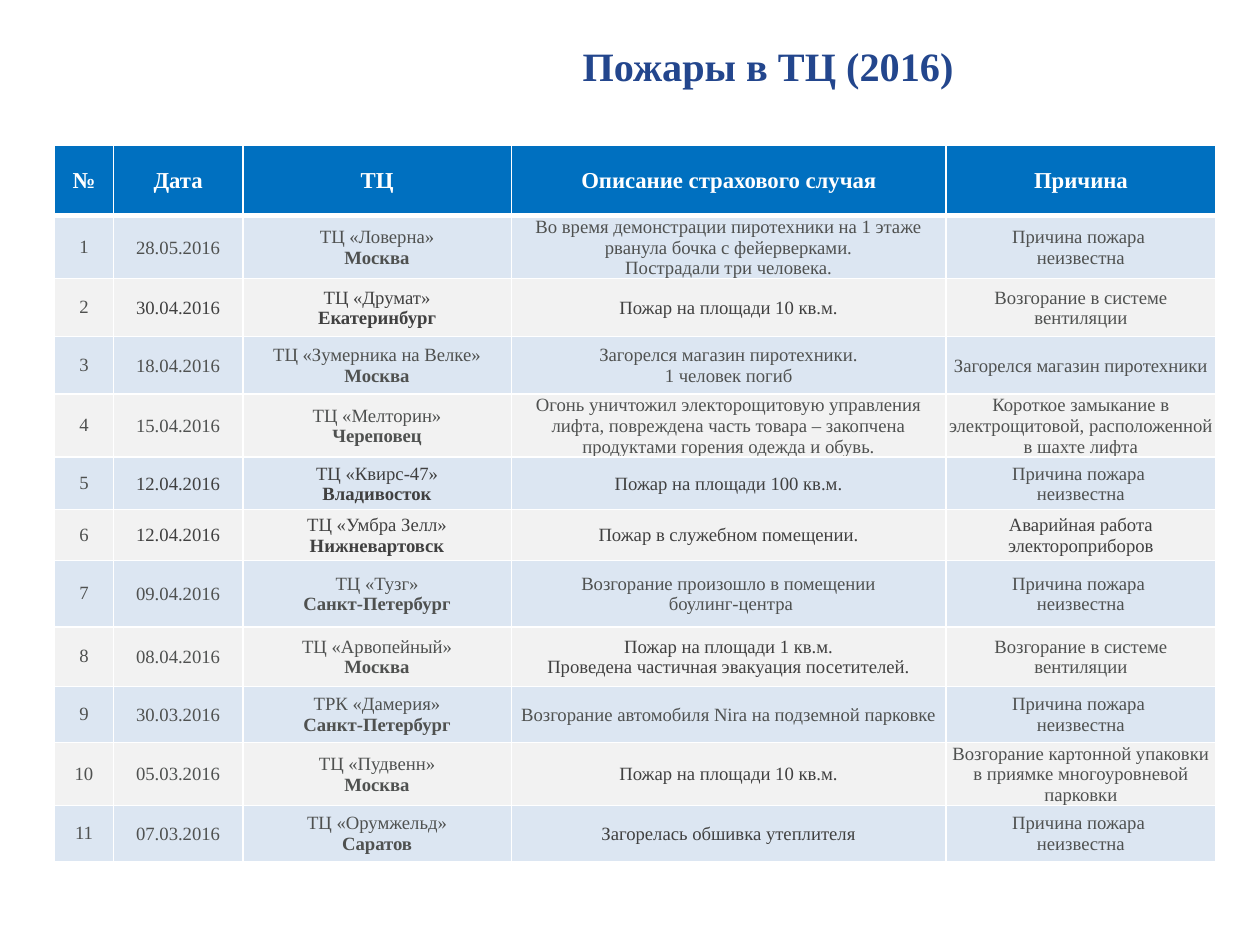
from lxml.etree import SubElement as Sub
from pptx import Presentation
from pptx.dml.color import RGBColor as Rgb
from pptx.enum.text import MSO_ANCHOR as Anchor, PP_ALIGN as Align
from pptx.oxml.ns import qn
from pptx.util import Pt

FONT = "Times New Roman"
WHITE, BLUE, NAVY = "FFFFFF", "0070C0", "23468D"
GREY, DARK = "4F5150", "404040"
BANDS = ["DCE6F2", "F2F2F2"]

WIDTHS = [33.6, 74, 153.4, 248.4, 154.2]
HEIGHTS = [40, 32.4, 33, 33, 30, 30, 29, 38, 34, 32, 32, 32]
HEADS = ["№", "Дата", "ТЦ", "Описание страхового случая", "Причина"]
NO_CAUSE = "Причина пожара \nнеизвестна"
VENT = "Возгорание в системе вентиляции"

# Date, centre, city, event, cause, columns set in the darker grey
FIRES = [
    ("28.05.2016", "ТЦ «Ловерна»", "Москва",
     "Во время демонстрации пиротехники на 1 этаже рванула бочка с "
     "фейерверками.\nПострадали три человека.", NO_CAUSE, ()),
    ("30.04.2016", "ТЦ «Друмат»", "Екатеринбург",
     "Пожар на площади 10 кв.м.", VENT, (1, 2, 3)),
    ("18.04.2016", "ТЦ «Зумерника на Велке»", "Москва",
     "Загорелся магазин пиротехники.\n1 человек погиб",
     "Загорелся магазин пиротехники", ()),
    ("15.04.2016", "ТЦ «Мелторин»", "Череповец",
     "Огонь уничтожил электорощитовую управления лифта, повреждена часть "
     "товара – закопчена продуктами горения одежда и обувь.",
     "Короткое замыкание в электрощитовой, расположенной в шахте лифта", ()),
    ("12.04.2016", "ТЦ «Квирс-47»", "Владивосток",
     "Пожар на площади 100 кв.м.", NO_CAUSE, (1, 2, 3)),
    ("12.04.2016", "ТЦ «Умбра Зелл»", "Нижневартовск",
     "Пожар в служебном помещении.",
     "Аварийная работа электороприборов", (1, 2, 3, 4)),
    ("09.04.2016", "ТЦ «Тузг»", "Санкт-Петербург",
     "Возгорание произошло в помещении\n боулинг-центра", NO_CAUSE, ()),
    ("08.04.2016", "ТЦ «Арвопейный»", "Москва",
     "Пожар на площади 1 кв.м.\nПроведена частичная эвакуация посетителей.",
     VENT, (3,)),
    ("30.03.2016", "ТРК «Дамерия»", "Санкт-Петербург",
     "Возгорание автомобиля Nira на подземной парковке", NO_CAUSE, ()),
    ("05.03.2016", "ТЦ «Пудвенн»", "Москва",
     "Пожар на площади 10 кв.м.",
     "Возгорание картонной упаковки в приямке многоуровневой парковки",
     (3,)),
    ("07.03.2016", "ТЦ «Орумжельд»", "Саратов",
     "Загорелась обшивка утеплителя", NO_CAUSE, (3,)),
]


def color(code):
    return Rgb.from_string(code)


def write(frame, lines, size, code):
    """Fill a frame with centred lines, each a (text, bold) pair."""
    for i, (text, bold) in enumerate(lines):
        para = frame.add_paragraph() if i else frame.paragraphs[0]
        para.alignment = Align.CENTER
        run = para.add_run()
        run.text = text
        font = run.font
        font.name, font.size, font.bold = FONT, Pt(size), bold
        font.color.rgb = color(code)


def border(cell, top, low):
    props = cell._tc.get_or_add_tcPr()
    for side, width in (("L", 1), ("R", 1), ("T", top), ("B", low)):
        line = Sub(props, qn(f"a:ln{side}"), w=str(Pt(width)))
        fill = Sub(line, qn("a:solidFill"))
        Sub(fill, qn("a:srgbClr"), val=WHITE)


def paint(cell, lines, size, code, back, top=1, low=1):
    border(cell, top, low)
    cell.fill.solid()
    cell.fill.fore_color.rgb = color(back)
    cell.vertical_anchor = Anchor.MIDDLE
    write(cell.text_frame, lines, size, code)


def trim(cell):
    cell.margin_left = cell.margin_right = cell.margin_top = Pt(0.72)
    cell.margin_bottom = 0


def plain(text):
    return [(line, False) for line in text.split("\n")]


def add_title(slide, text):
    title = slide.shapes.title
    title.left, title.top = Pt(206.6), Pt(9.4)
    title.width, title.height = Pt(465), Pt(55.4)
    title.text_frame.vertical_anchor = Anchor.MIDDLE
    write(title.text_frame, [(text, True)], 23, NAVY)


def add_grid(slide):
    grid = slide.shapes.add_table(
        len(HEIGHTS), len(WIDTHS), Pt(31.2), Pt(83.2),
        Pt(sum(WIDTHS)), Pt(sum(HEIGHTS))).table
    for col, width in zip(grid.columns, WIDTHS):
        col.width = Pt(width)
    for row, height in zip(grid.rows, HEIGHTS):
        row.height = Pt(height)
    return grid


def fill_grid(grid):
    for col, head in enumerate(HEADS):
        paint(grid.cell(0, col), [(head, True)], 13, WHITE, BLUE, low=3)
    for row, (date, mall, city, event, cause, dark) in enumerate(FIRES, 1):
        texts = [plain(str(row)), plain(date), [(mall, False), (city, True)],
                 plain(event), plain(cause)]
        for col, lines in enumerate(texts):
            cell = grid.cell(row, col)
            paint(cell, lines, 10.7, DARK if col in dark else GREY,
                  BANDS[(row - 1) % 2], top=3 if row == 1 else 1)
            if col:
                trim(cell)


def main():
    deck = Presentation()
    deck.slide_width, deck.slide_height = Pt(720), Pt(540)
    slide = deck.slides.add_slide(deck.slide_layouts[5])
    add_title(slide, "Пожары в ТЦ (2016)")
    fill_grid(add_grid(slide))
    deck.save("out.pptx")


if __name__ == "__main__":
    main()
